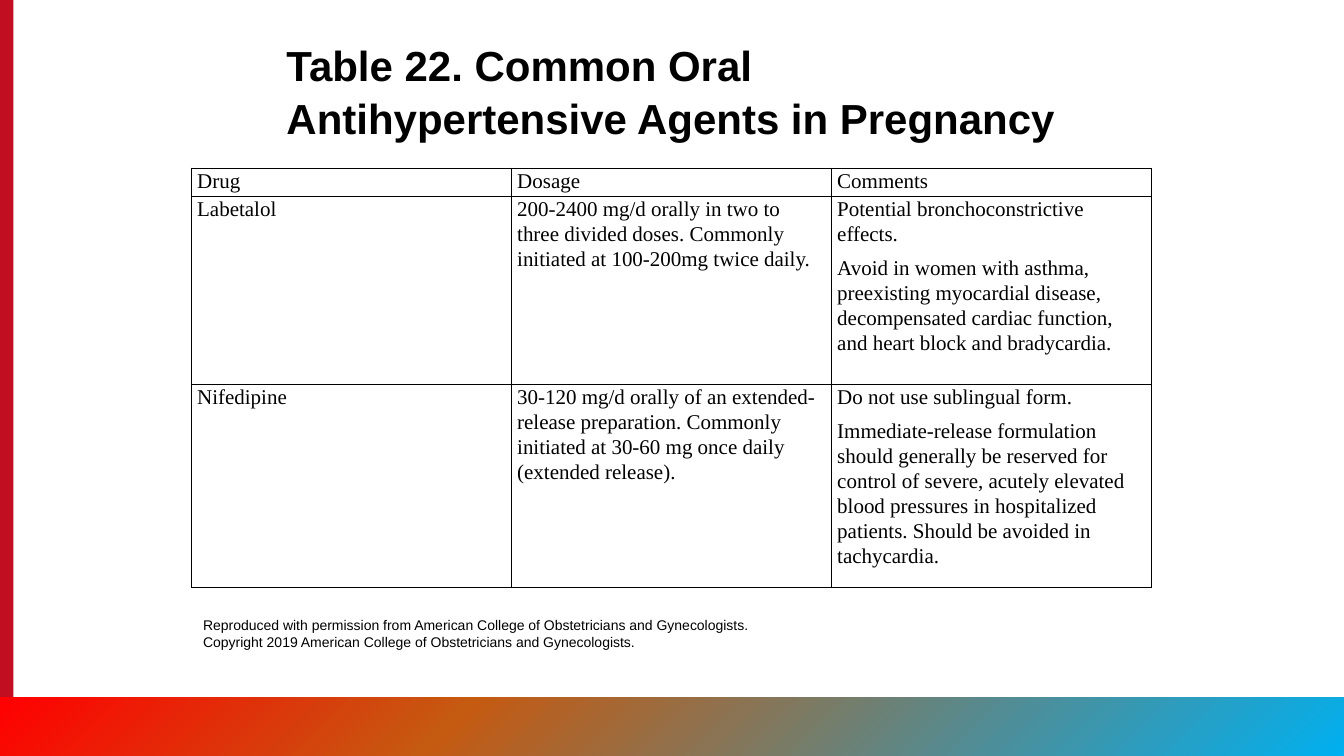
from copy import deepcopy

from lxml.etree import SubElement
from pptx import Presentation
from pptx.dml.color import RGBColor
from pptx.enum.shapes import MSO_SHAPE as SHAPE
from pptx.enum.text import MSO_ANCHOR as ANCHOR
from pptx.oxml.ns import qn
from pptx.util import Pt

COLORS = {
    "text": "000000",
    "edge": "C10E21",
    "red": "FF0000",
    "orange": "C55A11",
    "blue": "00B0F0",
}
WIDTH, HEIGHT = 1152, 648
BAR_TOP = 597.6
COLUMN_WIDTH = 274.32
ROW_HEIGHTS = [24.2, 161.3, 174.2]
AGENTS = [
    [["Drug"], ["Dosage"], ["Comments"]],
    [
        ["Labetalol"],
        ["200-2400 mg/d orally in two to three divided doses. "
         "Commonly initiated at 100-200mg twice daily."],
        ["Potential bronchoconstrictive effects.",
         "Avoid in women with asthma, preexisting myocardial disease, "
         "decompensated cardiac function, and heart block and bradycardia."],
    ],
    [
        ["Nifedipine"],
        ["30-120 mg/d orally of an extended-release preparation. "
         "Commonly initiated at 30-60 mg once daily (extended release)."],
        ["Do not use sublingual form.",
         "Immediate-release formulation should generally be reserved for "
         "control of severe, acutely elevated blood pressures in hospitalized "
         "patients. Should be avoided in tachycardia."],
    ],
]
CREDIT = [
    "Reproduced with permission from American College of Obstetricians and Gynecologists.",
    "Copyright 2019 American College of Obstetricians and Gynecologists.",
]


def rgb(name):
    return RGBColor.from_string(COLORS[name])


def write(frame, lines, size, font="Arial", bold=False, spacing=1.0, after=0):
    """Fill a text frame with one paragraph per line."""
    frame.word_wrap = True
    for index, line in enumerate(lines):
        paragraph = frame.paragraphs[0] if index == 0 else frame.add_paragraph()
        paragraph.line_spacing = spacing
        paragraph.space_after = Pt(after)
        run = paragraph.add_run()
        run.text = line
        run.font.name = font
        run.font.size = Pt(size)
        run.font.bold = bold
        run.font.color.rgb = rgb("text")


def add_text(slide, left, top, width, height, lines, size, anchor=ANCHOR.TOP, **style):
    box = slide.shapes.add_textbox(Pt(left), Pt(top), Pt(width), Pt(height))
    box.text_frame.vertical_anchor = anchor
    write(box.text_frame, lines, size, **style)


def add_band(slide, left, top, width, height):
    band = slide.shapes.add_shape(
        SHAPE.RECTANGLE, Pt(left), Pt(top), Pt(width), Pt(height))
    band.shadow.inherit = False
    band.line.fill.background()
    return band


def fill_gradient(band, stops, angle):
    band.fill.gradient()
    band.fill.gradient_angle = angle
    stop_list = band._element.spPr.find(qn("a:gradFill")).find(qn("a:gsLst"))
    while len(stop_list) < len(stops):
        stop_list.append(deepcopy(stop_list[0]))
    for stop, (position, color) in zip(band.fill.gradient_stops, stops):
        stop.position = position
        stop.color.rgb = rgb(color)


def outline_cell(cell):
    properties = cell._tc.get_or_add_tcPr()
    for index, side in enumerate(("lnL", "lnR", "lnT", "lnB")):
        border = SubElement(properties, qn(f"a:{side}"), w=str(Pt(1)))
        solid = SubElement(border, qn("a:solidFill"))
        SubElement(solid, qn("a:srgbClr"), val=COLORS["text"])
        properties.insert(index, border)


def add_agent_table(slide, left, top):
    columns = len(AGENTS[0])
    table = slide.shapes.add_table(
        len(AGENTS), columns, Pt(left), Pt(top),
        Pt(COLUMN_WIDTH * columns), Pt(sum(ROW_HEIGHTS))).table
    table.first_row = table.horz_banding = False
    for column in table.columns:
        column.width = Pt(COLUMN_WIDTH)
    for row, height, agent in zip(table.rows, ROW_HEIGHTS, AGENTS):
        row.height = Pt(height)
        for cell, lines in zip(row.cells, agent):
            cell.margin_left = cell.margin_right = Pt(5)
            cell.margin_top = cell.margin_bottom = Pt(0)
            cell.fill.background()
            outline_cell(cell)
            write(cell.text_frame, lines, 18, font="Times New Roman",
                  spacing=1.07, after=8)


def main():
    deck = Presentation()
    deck.slide_width, deck.slide_height = Pt(WIDTH), Pt(HEIGHT)
    slide = deck.slides.add_slide(deck.slide_layouts[6])

    edge = add_band(slide, 0, 0, 11.5, HEIGHT)
    edge.fill.solid()
    edge.fill.fore_color.rgb = rgb("edge")
    bar = add_band(slide, 0, BAR_TOP, WIDTH, HEIGHT - BAR_TOP)
    fill_gradient(bar, [(0, "red"), (0.34, "orange"), (1, "blue")], 315)

    add_text(slide, 238.5, 30, 675.5, 96,
             ["Table 22. Common Oral Antihypertensive Agents in Pregnancy"],
             36, anchor=ANCHOR.BOTTOM, bold=True, spacing=1.06)
    add_agent_table(slide, 164, 144)
    add_text(slide, 167, 525, 679, 36, CREDIT, 12)
    deck.save("out.pptx")


if __name__ == "__main__":
    main()
